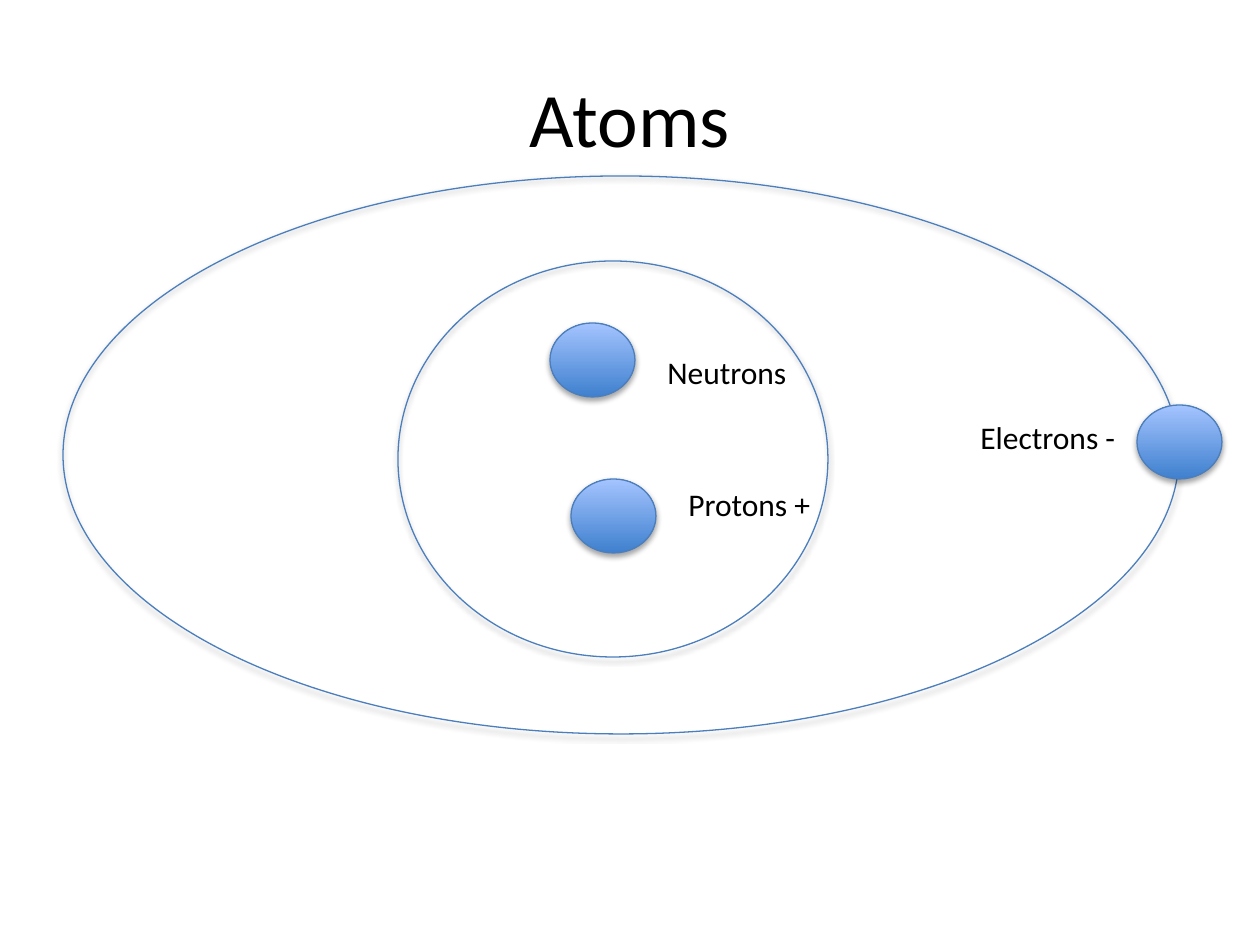
import pptx
import pptx.dml.color
import pptx.enum.shapes
import pptx.enum.text
import pptx.oxml
import pptx.oxml.ns
import pptx.util

PX = 914400 // 126
THEME = {
    "font": "Calibri",
    "text": "000000",
    "line": "4B7EBC",
    "bottom": "3F80CE",
    "top": "A4C4FF",
    "title_size": 44,
    "label_size": 18,
    "line_width": 0.75,
}
SHADOW = (
    '<a:outerShdw xmlns:a="http://schemas.openxmlformats.org/drawingml/2006/main" '
    'blurRad="40000" dist="23000" dir="5400000" rotWithShape="0">'
    '<a:srgbClr val="000000"><a:alpha val="35000"/></a:srgbClr></a:outerShdw>'
)
rgb = pptx.dml.color.RGBColor.from_string

prs = pptx.Presentation()
prs.slide_width = 1260 * PX
prs.slide_height = 945 * PX
s = prs.slides.add_slide(prs.slide_layouts[6])


def add_ellipse(x, y, w, h, filled):
    sp = s.shapes.add_shape(
        pptx.enum.shapes.MSO_SHAPE.OVAL, x * PX, y * PX, w * PX, h * PX
    )
    if filled:
        sp.fill.gradient()
        sp.fill.gradient_angle = 90
        for stop, color in zip(sp.fill.gradient_stops, ("bottom", "top")):
            stop.color.rgb = rgb(THEME[color])
    else:
        sp.fill.background()
    sp.line.color.rgb = rgb(THEME["line"])
    sp.line.width = pptx.util.Pt(THEME["line_width"])
    sp.shadow.inherit = False
    effects = sp._element.spPr.find(pptx.oxml.ns.qn("a:effectLst"))
    effects.append(pptx.oxml.parse_xml(SHADOW))


def add_text(text, x, y, w, h, size):
    sp = s.shapes.add_textbox(x * PX, y * PX, w * PX, h * PX)
    tf = sp.text_frame
    tf.text = text
    r = tf.paragraphs[0].runs[0]
    r.font.name = THEME["font"]
    r.font.size = pptx.util.Pt(THEME[size])
    r.font.color.rgb = rgb(THEME["text"])
    return tf


tf = add_text("Atoms", 63, 38, 1134, 157, "title_size")
tf.word_wrap = True
tf.vertical_anchor = pptx.enum.text.MSO_ANCHOR.MIDDLE
tf.paragraphs[0].alignment = pptx.enum.text.PP_ALIGN.CENTER

nucleus = (398, 261, 430, 396)
orbit = (63, 176, 1116, 558)
for x, y, w, h in (nucleus, orbit):
    add_ellipse(x, y, w, h, False)

particles = [
    ("Neutrons", 550, 323, 655, 347, 146),
    ("Protons +", 571, 479, 676, 479, 150),
    ("Electrons -", 1137, 405, 968, 412, 162),
]
for text, x, y, label_x, label_y, label_w in particles:
    add_ellipse(x, y, 85, 74, True)
    tf = add_text(text, label_x, label_y, label_w, 51, "label_size")
    tf.word_wrap = False
    tf.auto_size = pptx.enum.text.MSO_AUTO_SIZE.SHAPE_TO_FIT_TEXT

prs.save("out.pptx")
